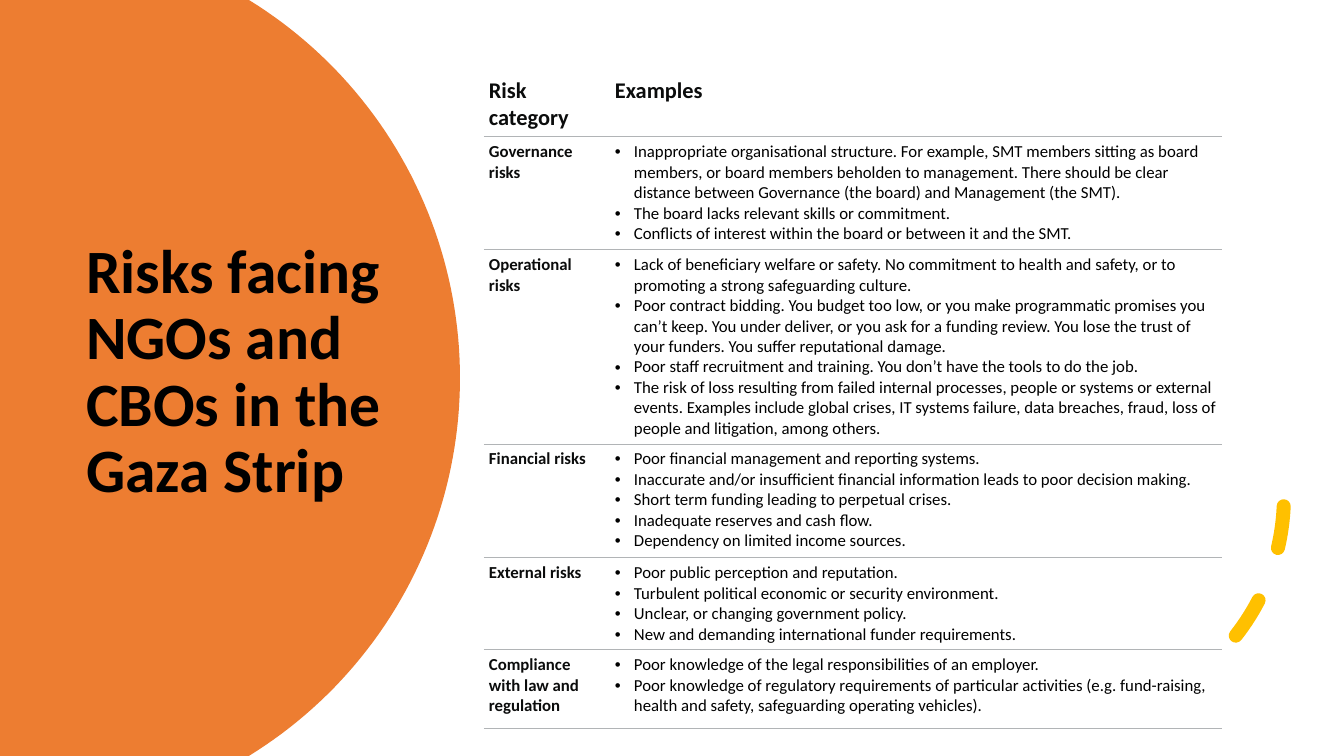
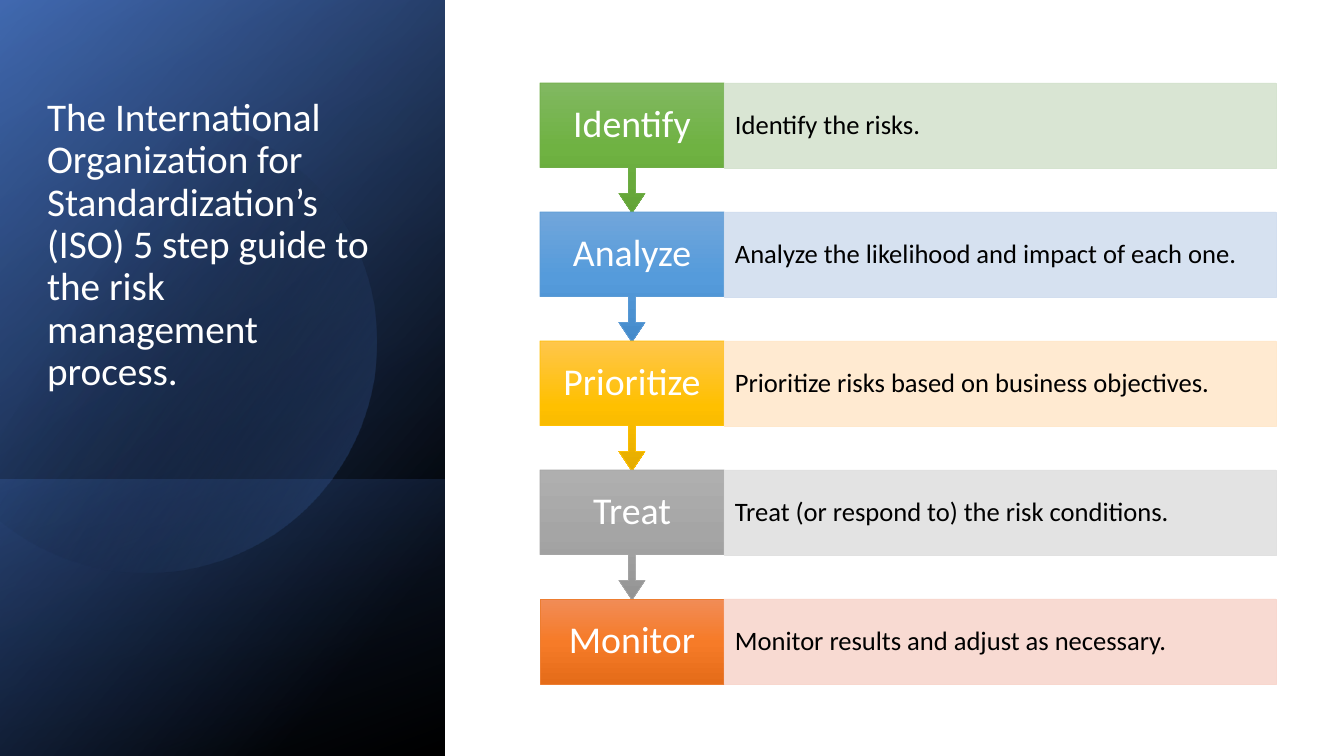
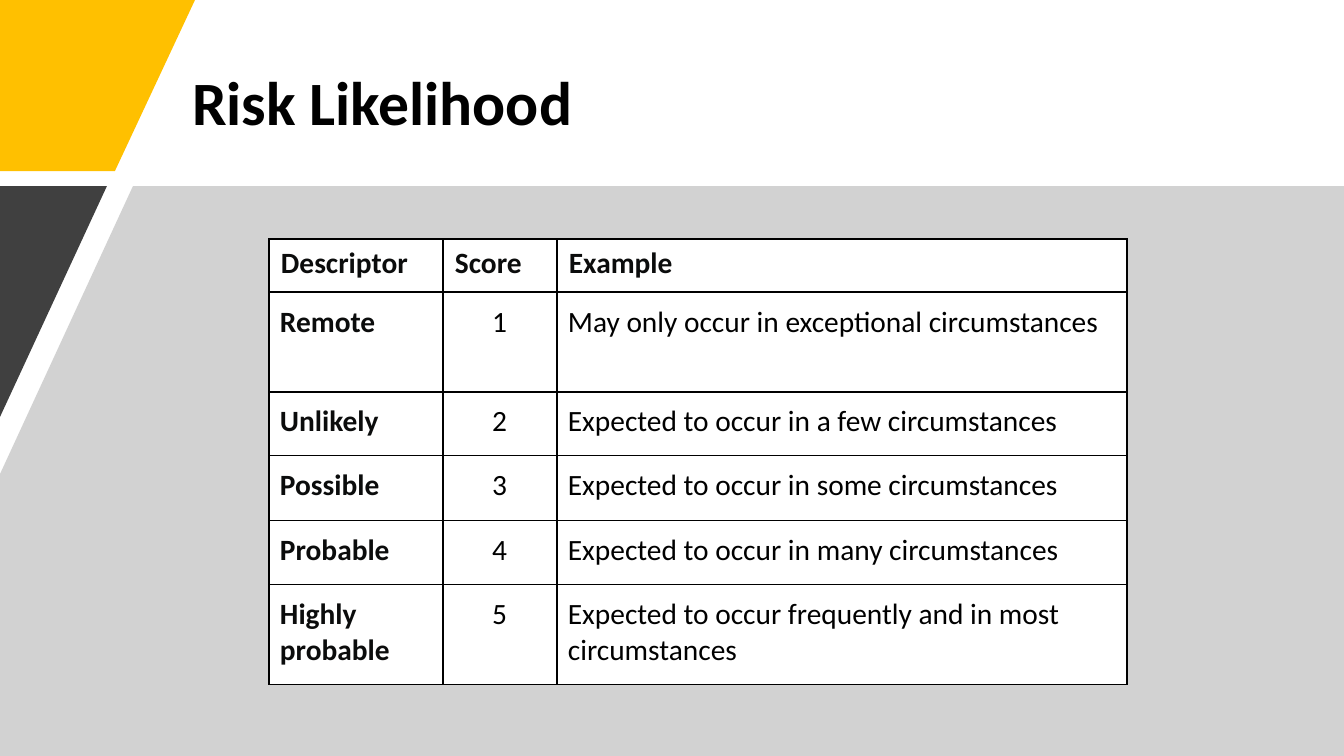
from math import cos, radians, sin

from lxml.etree import SubElement
from pptx import Presentation
from pptx.dml.color import RGBColor
from pptx.enum.dml import MSO_LINE
from pptx.enum.shapes import MSO_SHAPE as Shape
from pptx.enum.text import MSO_ANCHOR as Anchor, MSO_AUTO_SIZE as AutoSize, PP_ALIGN as Align
from pptx.oxml.ns import qn
from pptx.util import Emu, Pt

# Shared look
WIDTH, HEIGHT = 1344, 756
SCALE = 12192000 / WIDTH
FONT = "Calibri"
BLACK, WHITE, INK = "000000", "FFFFFF", "0B0C0C"
ORANGE, GOLD, RULE = "ED7D31", "FFC000", "B1B4B6"
BLUE, NAVY, PALE_BLUE = "4472C4", "2F5597", "8FAADC"

RISKS = [
    ("Governance risks", [
        "Inappropriate organisational structure. For example, SMT members sitting as board members, "
        "or board members beholden to management. There should be clear distance between "
        "Governance (the board) and Management (the SMT).",
        "The board lacks relevant skills or commitment.",
        "Conflicts of interest within the board or between it and the SMT."]),
    ("Operational risks", [
        "Lack of beneficiary welfare or safety. No commitment to health and safety, or to promoting "
        "a strong safeguarding culture.",
        "Poor contract bidding. You budget too low, or you make programmatic promises you can’t keep. "
        "You under deliver, or you ask for a funding review. You lose the trust of your funders. "
        "You suffer reputational damage.",
        "Poor staff recruitment and training. You don’t have the tools to do the job.",
        "The risk of loss resulting from failed internal processes, people or systems or external "
        "events. Examples include global crises, IT systems failure, data breaches, fraud, loss of "
        "people and litigation, among others."]),
    ("Financial risks", [
        "Poor financial management and reporting systems.",
        "Inaccurate and/or insufficient financial information leads to poor decision making.",
        "Short term funding leading to perpetual crises.",
        "Inadequate reserves and cash flow.",
        "Dependency on limited income sources."]),
    ("External risks", [
        "Poor public perception and reputation.",
        "Turbulent political economic or security environment.",
        "Unclear, or changing government policy.",
        "New and demanding international funder requirements."]),
    ("Compliance with law and regulation", [
        "Poor knowledge of the legal responsibilities of an employer.",
        "Poor knowledge of regulatory requirements of particular activities (e.g. fund-raising, "
        "health and safety, safeguarding operating vehicles)."]),
]

# Step, description, gradient from top to bottom, outline, tint
STEPS = [
    ("Identify", "Identify the risks.",
     ("81B861", "6FB242", "62A336"), "70AD47", "D5E3CF"),
    ("Analyze", "Analyze the likelihood and impact of each one.",
     ("71A6DB", "559BDB", "448ACA"), "5B9BD5", "D2DEEF"),
    ("Prioritize", "Prioritize risks based on business objectives.",
     ("FFC64B", "FFC000", "E3AB00"), GOLD, "FFE8CC"),
    ("Treat", "Treat (or respond to) the risk conditions.",
     ("AFAFAF", "A5A5A5", "939393"), "A5A5A5", "E1E1E1"),
    ("Monitor", "Monitor results and adjust as necessary.",
     ("F18C57", "F67B28", "E56C19"), ORANGE, "F8D7CE"),
]

LIKELIHOODS = [
    ("Remote", "May only occur in exceptional circumstances"),
    ("Unlikely", "Expected to occur in a few circumstances"),
    ("Possible", "Expected to occur in some circumstances"),
    ("Probable", "Expected to occur in many circumstances"),
    ("Highly probable", "Expected to occur frequently and in most circumstances"),
]


def px(length):
    return Emu(round(length * SCALE))


def rgb(color):
    return RGBColor.from_string(color)


# Fills and outlines

def fill_solid(shape, color, alpha=100):
    shape.fill.solid()
    shape.fill.fore_color.rgb = rgb(color)
    if alpha < 100:
        clr = next(shape.element.spPr.iter(qn("a:srgbClr")))
        SubElement(clr, qn("a:alpha"), val=str(alpha * 1000))


def fill_gradient(shape, stops, angle):
    """Stops are (percent, colour, alpha); the angle runs clockwise."""
    shape.fill.gradient()
    shape.fill.gradient_angle = (360 - angle) % 360
    stop_list = next(shape.element.spPr.iter(qn("a:gsLst")))
    for old in list(stop_list):
        stop_list.remove(old)
    for place, color, alpha in stops:
        stop = SubElement(stop_list, qn("a:gs"), pos=str(place * 1000))
        clr = SubElement(stop, qn("a:srgbClr"), val=color)
        SubElement(clr, qn("a:alpha"), val=str(alpha * 1000))


def set_line(shape, color=None, points=0.5):
    shape.shadow.inherit = False
    if color is None:
        shape.line.fill.background()
    else:
        shape.line.color.rgb = rgb(color)
        shape.line.width = Pt(points)


# Shapes

def add_box(page, kind, left, top, width, height, line=None):
    box = page.shapes.add_shape(kind, px(left), px(top), px(width), px(height))
    set_line(box, line)
    return box


def add_outline(page, points):
    start, *rest = [(px(x), px(y)) for x, y in points]
    builder = page.shapes.build_freeform(*start, scale=1.0)
    builder.add_line_segments(rest, close=True)
    outline = builder.convert_to_shape()
    set_line(outline)
    return outline


def arc_points(center_x, center_y, radius, reach, steps=90):
    """Points on a circle from -reach to +reach degrees."""
    angles = [radians(reach * (2 * i / steps - 1)) for i in range(steps + 1)]
    return [(center_x + radius * cos(a), center_y + radius * sin(a)) for a in angles]


# Text

def add_span(para, text, size, color, bold=False):
    span = para.add_run()
    span.text = text
    span.font.name = FONT
    span.font.size = Pt(size)
    span.font.bold = bold
    span.font.color.rgb = rgb(color)


def write_box(box, text, size, color, align, inset):
    frame = box.text_frame
    frame.word_wrap = True
    frame.vertical_anchor = Anchor.MIDDLE
    frame.margin_left = frame.margin_right = px(inset)
    frame.margin_top = frame.margin_bottom = px(10)
    para = frame.paragraphs[0]
    para.alignment = align
    para.line_spacing = 0.9
    add_span(para, text, size, color)


def set_title(page, text, place, size=44, color=BLACK, bold=True, anchor=Anchor.MIDDLE):
    title = page.shapes.title
    title.left, title.top, title.width, title.height = map(px, place)
    page.shapes.element.append(title.element)  # bring in front of the backdrop
    frame = title.text_frame
    frame.auto_size = AutoSize.NONE
    frame.word_wrap = True
    frame.vertical_anchor = anchor
    para = frame.paragraphs[0]
    para.alignment = Align.LEFT
    para.line_spacing = 0.9
    add_span(para, text, size, color, bold)


# Tables

def add_grid(page, left, top, columns, rows):
    frame = page.shapes.add_table(len(rows), len(columns), px(left), px(top),
                                  px(sum(columns)), px(sum(rows)))
    grid = frame.table
    grid.first_row = grid.horz_banding = False
    for column, width in zip(grid.columns, columns):
        column.width = px(width)
    for row, height in zip(grid.rows, rows):
        row.height = px(height)
    return grid


def set_borders(cell, sides, color, points):
    props = cell._tc.get_or_add_tcPr()
    for side in "LRTB":
        line = SubElement(props, qn("a:ln" + side), w=str(Pt(points)))
        if side in sides:
            fill = SubElement(line, qn("a:solidFill"))
            SubElement(fill, qn("a:srgbClr"), val=color)
        else:
            SubElement(line, qn("a:noFill"))


def set_bullet(para, indent):
    props = para._p.get_or_add_pPr()
    props.set("marL", str(px(indent)))
    props.set("indent", str(px(-indent)))
    SubElement(props, qn("a:buFont"), typeface="Arial")
    SubElement(props, qn("a:buChar"), char="•")


def write_cell(cell, lines, size, insets, strong=False, align=Align.LEFT, bullets=False):
    cell.fill.solid()
    cell.fill.fore_color.rgb = rgb(WHITE)
    cell.margin_left, cell.margin_top, cell.margin_right, cell.margin_bottom = map(px, insets)
    for i, line in enumerate(lines):
        para = cell.text_frame.add_paragraph() if i else cell.text_frame.paragraphs[0]
        para.alignment = align
        if bullets:
            set_bullet(para, 19)
        add_span(para, line, size, INK if strong else BLACK, strong)


# Slides

def build_risks(page):
    # Orange disc cut off by the slide edge
    disc = add_outline(page, [(0, 0), *arc_points(16, 378, 444, 58.4), (0, HEIGHT)])
    fill_solid(disc, ORANGE)
    set_title(page, "Risks facing NGOs and CBOs in the Gaza Strip", (76, 127, 353, 492))

    # Dashed arc; its angles are stored in 60000ths of a degree
    arc = add_box(page, Shape.ARC, 833, 271, 451, 451)
    arc.adjustments[0], arc.adjustments[1] = 2.5 * 0.6, 90 * 0.6
    arc.fill.background()
    set_line(arc, GOLD, 10)
    arc.line.dash_style = MSO_LINE.DASH
    arc.line._ln.set("cap", "rnd")

    # Table of risks
    insets = (5, 5, 5, 5)
    grid = add_grid(page, 484, 72, [126, 612], [64, 113, 194, 114, 92, 79])
    for r, row in enumerate(grid.rows):
        for cell in row.cells:
            set_borders(cell, "TB" if r else "B", RULE, 0.75)
    for c, heading in enumerate(("Risk category", "Examples")):
        write_cell(grid.cell(0, c), [heading], 16, insets, strong=True)
    for r, (category, examples) in enumerate(RISKS, 1):
        write_cell(grid.cell(r, 0), [category], 12, insets, strong=True)
        write_cell(grid.cell(r, 1), examples, 12, insets, bullets=True)


def build_steps(page):
    # Side panel made of layered gradients
    panel = (0, 0, 445, HEIGHT)
    foot = (0, 480, 445, HEIGHT - 480)
    for place, stops, angle in [
        (panel, [(0, NAVY, 100), (85, BLACK, 100)], 40),
        (panel, [(0, BLUE, 46), (100, BLACK, 0)], 60),
        (foot, [(0, BLUE, 29), (100, BLACK, 30)], 70),
    ]:
        fill_gradient(add_box(page, Shape.RECTANGLE, *place), stops, angle)
    disc = add_outline(page, arc_points(146, 342, 230, 129.4))
    fill_gradient(disc, [(29, BLACK, 0), (100, BLUE, 43)], 30)
    glaze = add_box(page, Shape.RECTANGLE, *panel)
    fill_gradient(glaze, [(0, PALE_BLUE, 11), (100, BLACK, 0)], 60)
    set_title(page, "The International Organization for Standardization’s (ISO) 5 step guide to "
              "the risk management process.", (37, 56, 344, 343),
              size=28, color=WHITE, bold=False, anchor=Anchor.BOTTOM)

    # One row per step, each but the last pointing to the next
    left, top, width, height, pitch = 540, 83, 184, 85, 129
    for i, (name, detail, shades, line, tint) in enumerate(STEPS):
        y = top + i * pitch
        if i < len(STEPS) - 1:
            step = add_box(page, Shape.DOWN_ARROW_CALLOUT, left, y, width, pitch + 1, line)
            for k, value in enumerate((0.05, 0.1, 0.15, 0.65)):
                step.adjustments[k] = value
        else:
            step = add_box(page, Shape.RECTANGLE, left, y, width, height, line)
        fill_gradient(step, [(k * 50, shade, 100) for k, shade in enumerate(shades)], 90)
        write_box(step, name, 27, WHITE, Align.CENTER, 13)
        note = add_box(page, Shape.RECTANGLE, left + width, y, 552, height, tint)
        fill_solid(note, tint, 90)
        write_box(note, detail, 19, BLACK, Align.LEFT, 11)


def build_likelihood(page):
    # Slanted corner, grey ground and dark wedge
    for points, color, alpha in [
        ([(0, 0), (195, 0), (115, 171), (0, 171)], GOLD, 100),
        ([(133, 186), (WIDTH, 186), (WIDTH, HEIGHT), (0, HEIGHT), (0, 474)], "A6A6A6", 50),
        ([(0, 186), (107, 186), (0, 417)], "404040", 100),
    ]:
        fill_solid(add_outline(page, points), color, alpha)
    set_title(page, "Risk Likelihood", (182, 40, 1032, 131))

    # Table of scores
    grid = add_grid(page, 269, 239, [174, 114, 570], [53, 100, 64, 65, 64, 100])
    for cell in grid.iter_cells():
        set_borders(cell, "LRTB", BLACK, 1)
    for c, heading in enumerate(("Descriptor", "Score", "Example")):
        write_cell(grid.cell(0, c), [heading], 21, (12, 6, 12, 6), strong=True)
    insets = (11, 12, 12, 12)
    for score, (descriptor, example) in enumerate(LIKELIHOODS, 1):
        write_cell(grid.cell(score, 0), [descriptor], 21, insets, strong=True)
        write_cell(grid.cell(score, 1), [str(score)], 21, insets, align=Align.CENTER)
        write_cell(grid.cell(score, 2), [example], 21, insets)


def main():
    deck = Presentation()
    deck.slide_width, deck.slide_height = px(WIDTH), px(HEIGHT)
    title_only = deck.slide_layouts[5]
    for build in (build_risks, build_steps, build_likelihood):
        build(deck.slides.add_slide(title_only))
    deck.save("out.pptx")


if __name__ == "__main__":
    main()
